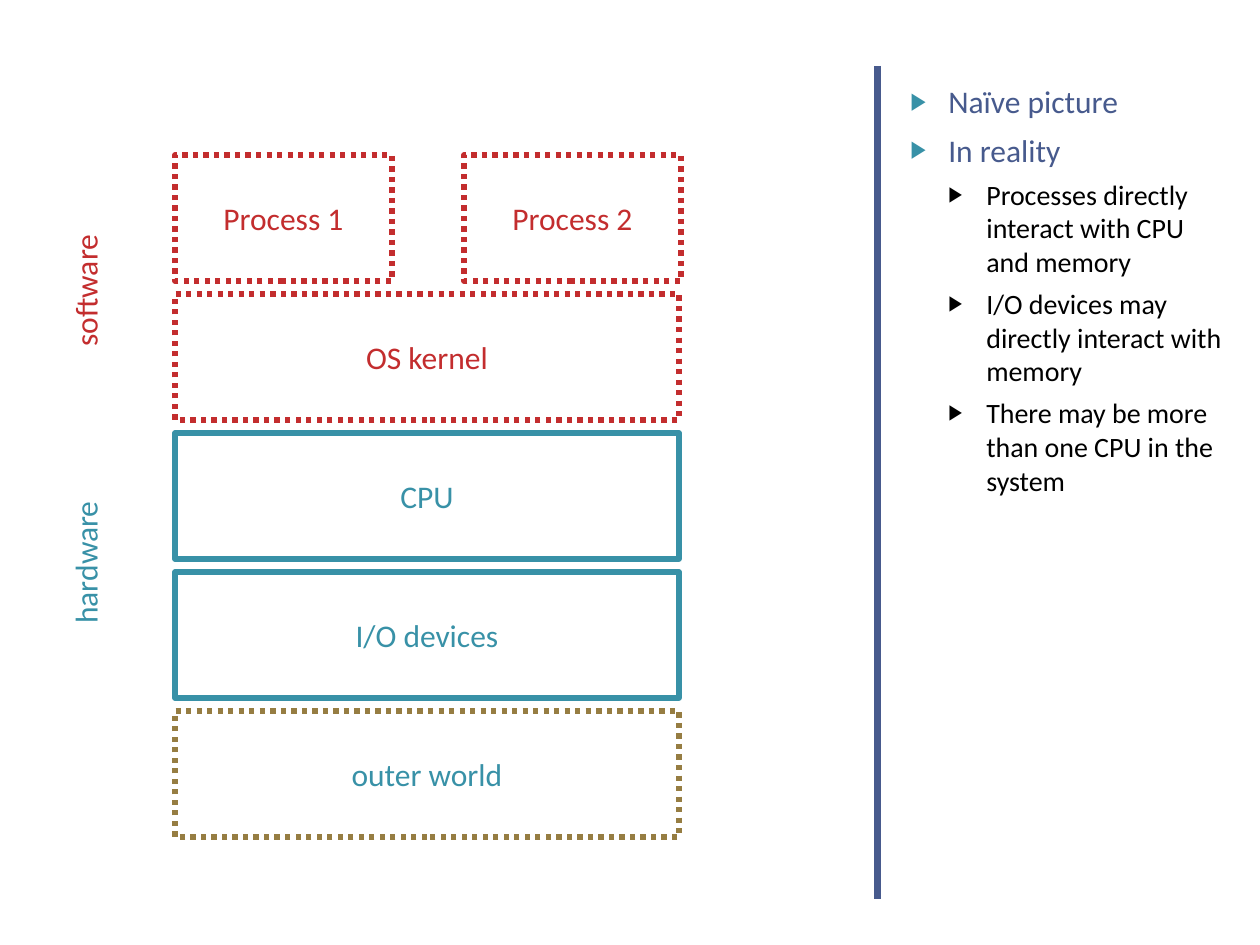
"""Draw the layers of a computer system beside notes on how they interact."""
from lxml.etree import SubElement
from pptx import Presentation
from pptx.dml.color import RGBColor
from pptx.enum.dml import MSO_LINE
from pptx.enum.shapes import MSO_CONNECTOR, MSO_SHAPE
from pptx.enum.text import MSO_ANCHOR, PP_ALIGN
from pptx.oxml.ns import qn
from pptx.util import Pt

INK = {"red": "C32D2E", "teal": "3891A7", "tan": "967D42",
       "navy": "475A8D", "black": "000000"}


def px(count):
    return round(count * 914400 / 126)


def tint(name):
    return RGBColor.from_string(INK[name])


class Deck:
    def __init__(self, wide, high, font):
        self.font = font
        self.file = Presentation()
        self.file.slide_width, self.file.slide_height = px(wide), px(high)
        self.slide = self.file.slides.add_slide(self.file.slide_layouts[6])

    def run(self, para, text, ink, size=18):
        run = para.add_run()
        run.text = text
        run.font.name = self.font
        run.font.size = Pt(size)
        run.font.color.rgb = tint(ink)

    def center(self, shape, text, ink):
        frame = shape.text_frame
        frame.word_wrap = True
        frame.vertical_anchor = MSO_ANCHOR.MIDDLE
        para = frame.paragraphs[0]
        para.alignment = PP_ALIGN.CENTER
        self.run(para, text, ink)

    def box(self, area, text, ink, edge, dots):
        shape = self.slide.shapes.add_shape(MSO_SHAPE.RECTANGLE, *map(px, area))
        shape.shadow.inherit = False
        shape.fill.background()
        shape.line.color.rgb = tint(edge)
        shape.line.width = Pt(3)
        if dots:
            shape.line.dash_style = MSO_LINE.ROUND_DOT
        self.center(shape, text, ink)

    def label(self, area, text, ink):
        shape = self.slide.shapes.add_textbox(*map(px, area))
        shape.rotation = 270
        self.center(shape, text, ink)

    def rule(self, ends, ink, width):
        line = self.slide.shapes.add_connector(MSO_CONNECTOR.STRAIGHT, *map(px, ends))
        line.line.color.rgb = tint(ink)
        line.line.width = Pt(width)
        SubElement(line._element.spPr, qn("a:effectLst"))

    def bullet(self, para, level, ink):
        props = para._p.get_or_add_pPr()
        props.set("marL", str(px(38 * (level + 1))))
        props.set("indent", str(px(-38)))
        color = SubElement(props, qn("a:buClr"))
        SubElement(color, qn("a:srgbClr"), val=INK[ink])
        SubElement(props, qn("a:buSzPct"), val="76000")
        SubElement(props, qn("a:buFont"), typeface=self.font)
        SubElement(props, qn("a:buChar"), char="▶")

    def notes(self, area, items):
        styles = [("navy", "teal", 18, 6), ("black", "black", 16, 5)]
        frame = self.slide.shapes.add_textbox(*map(px, area)).text_frame
        frame.word_wrap = True
        for spot, (level, text) in enumerate(items):
            ink, mark, size, gap = styles[level]
            para = frame.add_paragraph() if spot else frame.paragraphs[0]
            para.level = level
            para.space_before = Pt(gap)
            self.bullet(para, level, mark)
            self.run(para, text, ink, size)


def main():
    deck = Deck(1260, 945, "Calibri")
    deck.rule((878, 66, 878, 899), "navy", 4)
    deck.notes((898, 76, 338, 814), [
        (0, "Naïve picture"),
        (0, "In reality"),
        (1, "Processes directly interact with CPU and memory"),
        (1, "I/O devices may directly interact with memory"),
        (1, "There may be more than one CPU in the system"),
    ])
    left, top, step, high = 175, 155, 139, 126
    for spot in range(2):
        area = (left + 289 * spot, top, 217, high)
        deck.box(area, f"Process {spot + 1}", "red", "red", True)
    layers = [
        ("OS kernel", "red", "red", True),
        ("CPU", "teal", "teal", False),
        ("I/O devices", "teal", "teal", False),
        ("outer world", "teal", "tan", True),
    ]
    for row, layer in enumerate(layers, 1):
        deck.box((left, top + step * row, 504, high), *layer)
    for high, text, ink in [(246, "software", "red"), (518, "hardware", "teal")]:
        deck.label((-45, high, 260, 89), text, ink)
    deck.file.save("out.pptx")


if __name__ == "__main__":
    main()
